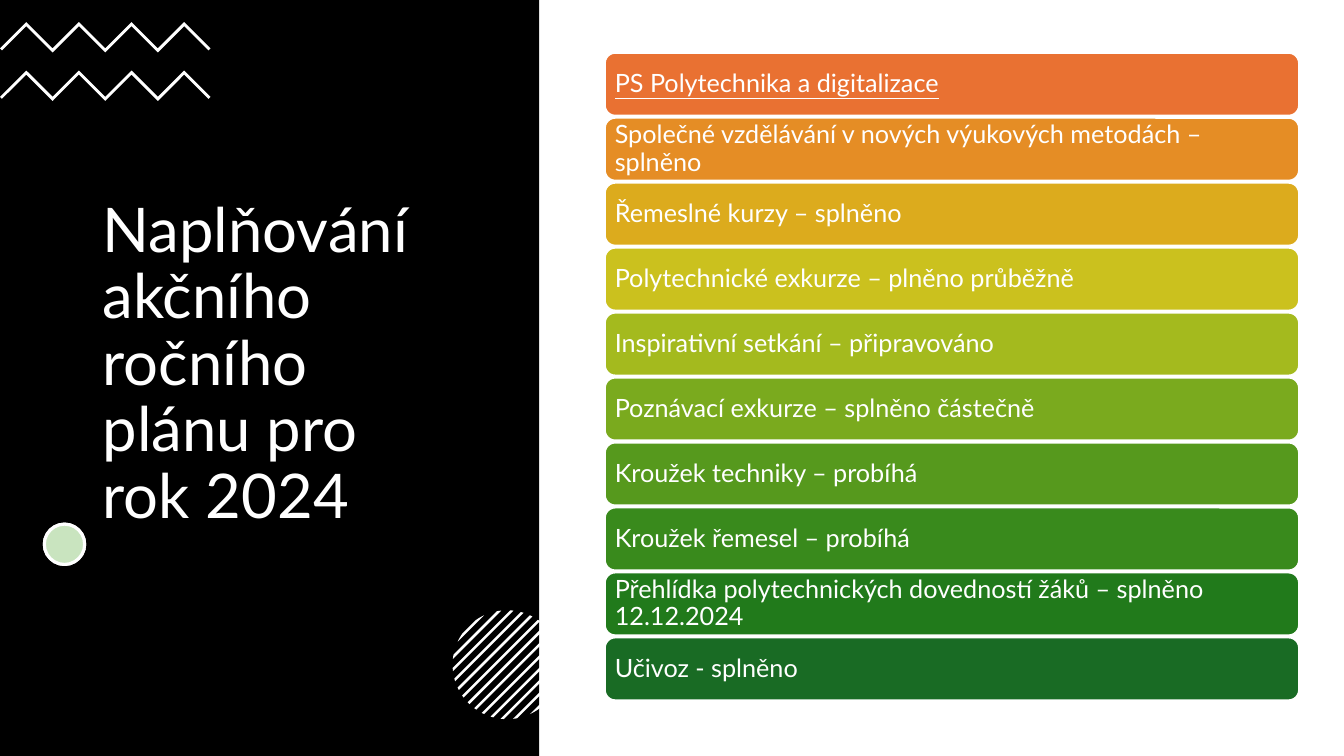
import dataclasses
import math
import typing

import lxml.etree
import pptx
import pptx.dml.color
import pptx.enum.shapes
import pptx.enum.text
import pptx.oxml.ns
import pptx.util

Pt = pptx.util.Pt
Kind = pptx.enum.shapes.MSO_SHAPE
Point = tuple[float, float]

COLOURS = {"panel": "000000", "white": "FFFFFF", "dot": "4EA72E"}
FONT = "Lato"


@dataclasses.dataclass
class Block:
    """A filled preset shape; lengths in points."""
    kind: Kind
    left: float
    top: float
    width: float
    height: float
    fill: str
    line_width: float = 0
    opacity: int = 100


@dataclasses.dataclass
class Activity:
    text: str
    fill: str
    underline: bool = False


ACTIVITIES = [
    Activity("PS Polytechnika a digitalizace", "E97132", True),
    Activity("Společné vzdělávání v nových výukových metodách – splněno", "E58D25"),
    Activity("Řemeslné kurzy – splněno", "DCAB1D"),
    Activity("Polytechnické exkurze – plněno průběžně", "CBC11E"),
    Activity("Inspirativní setkání – připravováno", "A4BA1E"),
    Activity("Poznávací exkurze – splněno částečně", "7AAA1E"),
    Activity("Kroužek techniky – probíhá", "56991D"),
    Activity("Kroužek řemesel – probíhá", "398A1C"),
    Activity("Přehlídka polytechnických dovedností žáků – splněno 12.12.2024", "217A1B"),
    Activity("Učivoz - splněno", "196B24"),
]


def rgb(value: str) -> pptx.dml.color.RGBColor:
    return pptx.dml.color.RGBColor.from_string(value)


def set_values(target: typing.Any, values: dict[str, typing.Any]) -> None:
    for name, value in values.items():
        setattr(target, name, value)


def paint(shape: typing.Any, fill: str, line_width: float = 0) -> None:
    shape.shadow.inherit = False
    shape.fill.solid()
    shape.fill.fore_color.rgb = rgb(fill)
    if line_width:
        shape.line.color.rgb = rgb(COLOURS["white"])
        shape.line.width = Pt(line_width)
    else:
        shape.line.fill.background()


def draw_block(page: typing.Any, block: Block) -> typing.Any:
    shape = page.shapes.add_shape(
        block.kind, Pt(block.left), Pt(block.top), Pt(block.width), Pt(block.height))
    paint(shape, block.fill, block.line_width)
    if block.opacity < 100:
        colour = next(shape.element.iter(pptx.oxml.ns.qn("a:srgbClr")))
        alpha = lxml.etree.SubElement(colour, pptx.oxml.ns.qn("a:alpha"))
        alpha.set("val", str(block.opacity * 1000))
    return shape


def draw_outline(group: typing.Any, points: list[Point]) -> None:
    corners = [(Pt(x), Pt(y)) for x, y in points]
    builder = group.shapes.build_freeform(*corners[0], scale=1.0)
    builder.add_line_segments(corners[1:], close=True)
    paint(builder.convert_to_shape(), COLOURS["white"])


def write(shape: typing.Any, text: str, size: float, margin: float,
          underline: bool = False) -> None:
    frame = shape.text_frame
    sides = ("left", "right", "top", "bottom")
    set_values(frame, {f"margin_{side}": Pt(margin) for side in sides})
    set_values(frame, {
        "word_wrap": True,
        "auto_size": pptx.enum.text.MSO_AUTO_SIZE.NONE,
        "vertical_anchor": pptx.enum.text.MSO_ANCHOR.MIDDLE,
    })
    para = frame.paragraphs[0]
    set_values(para, {"alignment": pptx.enum.text.PP_ALIGN.LEFT, "line_spacing": 0.9})
    span = para.add_run()
    span.text = text
    set_values(span.font, {"name": FONT, "size": Pt(size)})
    if underline:
        span.font.underline = True
    span.font.color.rgb = rgb(COLOURS["white"])


def zigzag(top: float) -> list[Point]:
    """Four peaks, as a band of even thickness."""
    step, rise, thickness, inset = 18.8, 18.8, 2.9, 1.4
    upper = [(step * i, top + (0 if i % 2 else rise)) for i in range(9)]
    lower = [(x, y + thickness) for x, y in upper[1:-1]]
    end = top + rise + inset
    return upper + [(step * 8 - inset, end)] + lower[::-1] + [(inset, end)]


def stripe(index: int) -> list[Point]:
    """A diagonal band cut off by a circle, numbered from the middle."""
    centre_x, centre_y, radius, pitch, half = 362.2, 474.8, 38.9, 6.24, 0.9
    near, far = (math.acos((index * pitch + shift) / radius) for shift in (-half, half))
    steps = [near + (far - near) * i / 4 for i in range(5)]
    angles = steps + [-angle for angle in reversed(steps)]
    return [(centre_x + radius * math.cos(angle + math.pi / 4),
             centre_y + radius * math.sin(angle + math.pi / 4)) for angle in angles]


def main() -> None:
    deck = pptx.Presentation()
    set_values(deck, {"slide_width": Pt(960), "slide_height": Pt(540)})
    page = deck.slides.add_slide(deck.slide_layouts[5])

    # Black panel behind the title
    title = page.shapes.title
    panel = draw_block(page, Block(Kind.RECTANGLE, 0, 0, 385.2, 540, COLOURS["panel"]))
    title.element.addprevious(panel.element)

    # Title
    set_values(title, {"left": Pt(66.2), "top": Pt(94.3),
                       "width": Pt(252), "height": Pt(333.4)})
    write(title, "Naplňování akčního ročního plánu pro rok 2024", 44, 7.2)

    # Zigzags
    zigzags = page.shapes.add_group_shape()
    for top in (15.8, 50.4):
        draw_outline(zigzags, zigzag(top))

    # Tinted dot on a white base
    for fill, opacity in ((COLOURS["white"], 100), (COLOURS["dot"], 30)):
        draw_block(page, Block(Kind.OVAL, 31.7, 374.4, 28.8, 28.8, fill, 2.25, opacity))

    # Striped circle
    stripes = page.shapes.add_group_shape()
    for index in range(-6, 7):
        draw_outline(stripes, stripe(index))

    # Activity bars
    for row, activity in enumerate(ACTIVITIES):
        bar = draw_block(page, Block(Kind.ROUNDED_RECTANGLE, 432, 37.7 + 46.4 * row,
                                     496, 45, activity.fill, 1.5))
        write(bar, activity.text, 18, 5, activity.underline)

    deck.save("out.pptx")


if __name__ == "__main__":
    main()
